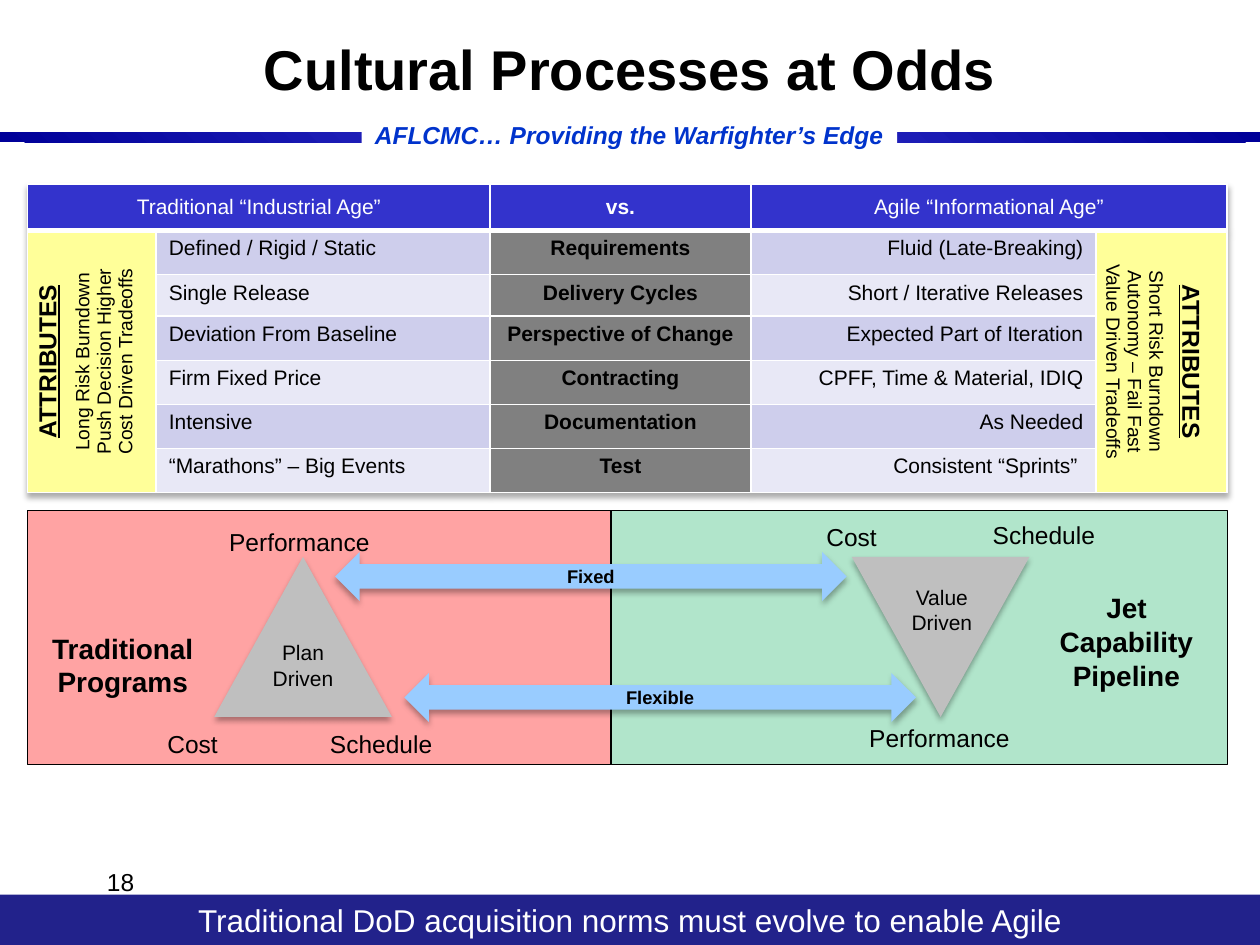
from lxml.etree import SubElement
from pptx import Presentation
from pptx.dml.color import RGBColor
from pptx.enum.shapes import MSO_SHAPE as Geo
from pptx.enum.text import MSO_ANCHOR, PP_ALIGN
from pptx.oxml import parse_xml
from pptx.oxml.ns import nsdecls, qn
from pptx.util import Inches, Pt

HUE = dict(black="000000", white="FFFFFF", navy="000099", blue="3333CC",
           motto="0033CC", foot="22228B", red="FFA3A3", green="B1E5CB",
           gray="808080", silver="BFBFBF", sky="99CCFF", yellow="FFFF99",
           odd="CECEEC", even="E8E8F6")
SIDE = dict(l=PP_ALIGN.LEFT, c=PP_ALIGN.CENTER, r=PP_ALIGN.RIGHT)

HEAD = [(0, "Traditional “Industrial Age”"), (2, "vs."),
        (3, "Agile “Informational Age”")]
ROWS = [
    ("Defined / Rigid / Static", "Requirements", "Fluid (Late-Breaking)"),
    ("Single Release", "Delivery Cycles", "Short / Iterative Releases"),
    ("Deviation From Baseline", "Perspective of Change",
     "Expected Part of Iteration"),
    ("Firm Fixed Price", "Contracting", "CPFF, Time & Material, IDIQ"),
    ("Intensive", "Documentation", "As Needed"),
    ("“Marathons” – Big Events", "Test", "Consistent “Sprints” "),
]
TRAITS = [
    (0, "vert270", ["Long Risk Burndown", "Push Decision Higher",
                    "Cost Driven Tradeoffs"]),
    (4, "vert", ["Short Risk Burndown", "Autonomy – Fail Fast",
                 "Value Driven Tradeoffs"]),
]
COLS = [1.02, 2.65, 2.07, 2.74, 1.04]
HIGH = [0.37, 0.35, 0.33] + [0.35] * 4

LEFT, MID, WIDE = 0.22, 4.85, 9.52
TOP, TALL = 4.05, 2.02
PANES = [(MID, LEFT + WIDE - MID, "green"), (LEFT, MID - LEFT, "red")]
CONES = [(1.7, 0), (6.76, 180)]
ARROWS = [(2.66, 4.38, "Fixed"), (3.21, 5.34, "Flexible")]
ENDS = [("Performance", 1.72, 4.13), ("Cost", 1.23, 5.74),
        ("Schedule", 2.52, 5.74), ("Cost", 6.46, 4.09),
        ("Schedule", 7.78, 4.08), ("Performance", 6.8, 5.69)]
SPAN = {"Performance": 1.32, "Cost": 0.61, "Schedule": 1.02}
CORES = [(2.06, 5.03, ["Plan", "Driven"]), (7.13, 4.59, ["Value", "Driven"])]
NAMES = [("Traditional Programs", 0.11, 4.96, 1.73, 0.64),
         ("Jet Capability Pipeline", 8.14, 4.64, 1.6, 0.91)]

deck = Presentation()
deck.slide_width, deck.slide_height = Inches(10), Inches(7.5)
page = deck.slides.add_slide(deck.slide_layouts[6])


def tint(name):
    return RGBColor.from_string(HUE[name])


def write(frame, lines, size, side="l", hue="black", bold=False,
          slant=False):
    """Put one run in each paragraph and return the paragraphs."""
    for i, line in enumerate(lines):
        para = frame.add_paragraph() if i else frame.paragraphs[0]
        para.alignment = SIDE[side]
        run = para.add_run()
        run.text = line
        font = run.font
        font.name, font.size = "Arial", Pt(size)
        font.bold, font.italic = bold, slant
        font.color.rgb = tint(hue)
    return frame.paragraphs


def shade(props):
    """Add a soft shadow that falls straight down."""
    props.append(parse_xml(
        f'<a:effectLst {nsdecls("a")}><a:outerShdw blurRad="{Pt(3.5)}" '
        f'dist="{Pt(2.2)}" dir="5400000" rotWithShape="0">'
        f'<a:srgbClr val="{HUE["black"]}"><a:alpha val="32000"/></a:srgbClr>'
        '</a:outerShdw></a:effectLst>'))


def draw(geo, box, hue, line=False, drop=False):
    shape = page.shapes.add_shape(geo, *map(Inches, box))
    shape.fill.solid()
    shape.fill.fore_color.rgb = tint(hue)
    if line:
        shape.line.color.rgb = tint("black")
        shape.line.width = Pt(0.75)
    else:
        shape.line.fill.background()
    if drop:
        shade(shape._element.spPr)
    else:
        shape.shadow.inherit = False
    return shape


def label(box, lines, size, side="l", wrap=True, mid=False, **look):
    frame = page.shapes.add_textbox(*map(Inches, box)).text_frame
    frame.word_wrap = wrap
    if mid:
        frame.vertical_anchor = MSO_ANCHOR.MIDDLE
    write(frame, lines, size, side, **look)


def paint(cell, hue, low=1):
    """Give a cell white edges (low = bottom width) and a fill."""
    props = cell._tc.get_or_add_tcPr()
    for tag in ("lnL", "lnR", "lnT", "lnB"):
        wide = low if tag == "lnB" else 1
        edge = SubElement(props, qn("a:" + tag), w=str(Pt(wide)))
        ink = SubElement(edge, qn("a:solidFill"))
        SubElement(ink, qn("a:srgbClr"), val=HUE["white"])
    cell.fill.solid()
    cell.fill.fore_color.rgb = tint(hue)


def chart_table():
    grid = page.shapes.add_table(
        len(HIGH), len(COLS), Inches(LEFT), Inches(1.46), Inches(WIDE),
        Inches(sum(HIGH))).table
    for col, wide in zip(grid.columns, COLS):
        col.width = Inches(wide)
    for row, tall in zip(grid.rows, HIGH):
        row.height = Inches(tall)
    shade(grid._tbl.tblPr)
    for c in range(len(COLS)):
        paint(grid.cell(0, c), "blue", 3)
    for c in (0, 3):
        grid.cell(0, c).merge(grid.cell(0, c + 1))
    for c, text in HEAD:
        cell = grid.cell(0, c)
        cell.vertical_anchor = MSO_ANCHOR.MIDDLE
        write(cell.text_frame, [text], 12, "c", "white", bold=c == 2)
    for r, texts in enumerate(ROWS, 1):
        band = "odd" if r % 2 else "even"
        for c, text, side in zip((1, 2, 3), texts, "lcr"):
            cell = grid.cell(r, c)
            paint(cell, "gray" if c == 2 else band)
            write(cell.text_frame, [text], 12, side, bold=c == 2)
    for c, turn, lines in TRAITS:
        for r in range(1, len(HIGH)):
            paint(grid.cell(r, c), "yellow")
        cell = grid.cell(1, c)
        cell.merge(grid.cell(len(ROWS), c))
        cell.vertical_anchor = MSO_ANCHOR.MIDDLE
        cell._tc.tcPr.set("vert", turn)
        first = write(cell.text_frame, ["ATTRIBUTES"] + lines, 11, "c")[0]
        first.space_after = Pt(6)
        font = first.runs[0].font
        font.size, font.bold, font.underline = Pt(14), True, True


rule = draw(Geo.RECTANGLE, (0, 1.05, 10, 0.08), "navy")
rule.fill.gradient()
stops = rule._element.spPr.find(qn("a:gradFill")).find(qn("a:gsLst"))
for stop in list(stops):
    stops.remove(stop)
for pos, hue in ((0, "navy"), (50, "blue"), (100, "navy")):
    stop = SubElement(stops, qn("a:gs"), pos=str(pos * 1000))
    SubElement(stop, qn("a:srgbClr"), val=HUE[hue])
rule.fill.gradient_angle = 45

motto = draw(Geo.RECTANGLE, (2.87, 0.95, 4.25, 0.24), "white").text_frame
motto.margin_top = motto.margin_bottom = 0
write(motto, ["AFLCMC… Providing the Warfighter’s Edge"], 14, "c", "motto",
      bold=True, slant=True)

for x, wide, hue in PANES:
    draw(Geo.RECTANGLE, (x, TOP, wide, TALL), hue, line=True)
label((1.04, 0.08, 7.92, 0.92), ["Cultural Processes at Odds"], 32, "c",
      mid=True, bold=True)
label((0.75, 6.83, 2.08, 0.5), ["18"], 14)
chart_table()

for x, turn in CONES:
    cone = draw(Geo.ISOSCELES_TRIANGLE, (x, 4.42, 1.41, 1.27), "silver",
                drop=True)
    cone.rotation = turn
for x, y, text in ARROWS:
    arrow = draw(Geo.LEFT_RIGHT_ARROW, (x, y, 4.06, 0.39), "sky", drop=True)
    write(arrow.text_frame, [text], 10.5, "c", bold=True)
for text, x, y in ENDS:
    label((x, y, SPAN[text], 0.34), [text], 14, wrap=False)
for x, y, lines in CORES:
    label((x, y, 0.69, 0.5), lines, 12, "c", wrap=False)
for text, *box in NAMES:
    label(box, [text], 16, "c", bold=True)

foot = draw(Geo.RECTANGLE, (0, 7.1, 10, 0.4), "foot")
write(foot.text_frame,
      ["Traditional DoD acquisition norms must evolve to enable Agile"],
      18, "c", "white")

deck.save("out.pptx")
